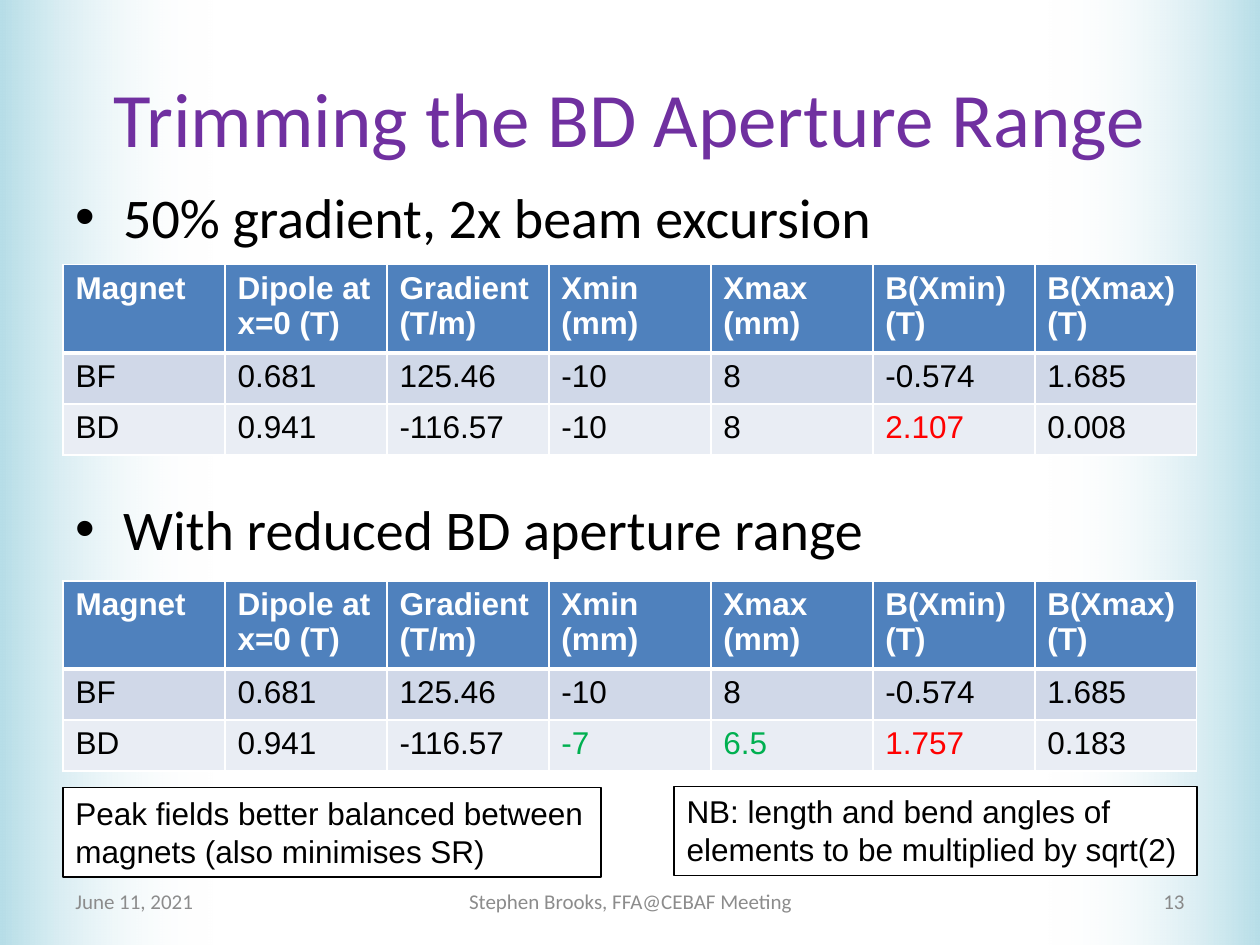
from lxml.etree import SubElement
from pptx import Presentation
from pptx.dml.color import RGBColor
from pptx.enum.shapes import MSO_SHAPE
from pptx.enum.text import MSO_ANCHOR, PP_ALIGN
from pptx.oxml.ns import qn
from pptx.util import Inches, Pt

COLUMNS, ROWS = 20, 15
HEADINGS = ["Magnet", "Dipole at x=0 (T)", "Gradient (T/m)", "Xmin (mm)",
            "Xmax (mm)", "B(Xmin) (T)", "B(Xmax) (T)"]
BF = ["BF", "0.681", "125.46", "-10", "8", "-0.574", "1.685"]
BD_FULL = ["BD", "0.941", "-116.57", "-10", "8", "2.107", "0.008"]
BD_TRIMMED = ["BD", "0.941", "-116.57", "-7", "6.5", "1.757", "0.183"]
RED, GREEN, GREY = "FF0000", "00B050", "8C8C8C"


def color(value):
    return RGBColor.from_string(value)


def style(target, values):
    for name, value in values.items():
        setattr(target, name, value)


class MagnetSlide:
    heading_font = "Calibri"
    data_font = "Arial"
    header_fill = "4F81BD"
    band_fills = ["D0D8E8", "E9EDF4"]
    edge_tint = "B7DEE8"

    def __init__(self):
        self.deck = Presentation()
        style(self.deck, {"slide_width": Inches(10), "slide_height": Inches(7.5)})
        self.page = self.deck.slides.add_slide(self.deck.slide_layouts[6])

    def across(self, columns):
        return round(self.deck.slide_width * columns / COLUMNS)

    def down(self, rows):
        return round(self.deck.slide_height * rows / ROWS)

    def place(self, left, top, width, height):
        return self.across(left), self.down(top), self.across(width), self.down(height)

    def add_words(self, para, words, size, font, ink="000000", bold=False):
        span = para.add_run()
        span.text = words
        style(span.font, {"size": Pt(size), "name": font, "bold": bold})
        span.font.color.rgb = color(ink)

    def edge(self, left, rotation):
        band = self.page.shapes.add_shape(
            MSO_SHAPE.RECTANGLE, *self.place(left, 0, 3.38, ROWS))
        band.rotation = rotation
        band.shadow.inherit = False
        band.line.fill.background()
        band.fill.gradient()
        band.fill.gradient_angle = 0
        for stop, tint in zip(band.fill.gradient_stops, [self.edge_tint, "FFFFFF"]):
            stop.color.rgb = color(tint)
        clear = band._element.spPr.findall(".//" + qn("a:srgbClr"))[1]
        SubElement(clear, qn("a:alpha"), val="0")

    def text(self, area, words, size, ink, align=PP_ALIGN.LEFT):
        box = self.page.shapes.add_textbox(*self.place(*area))
        style(box.text_frame, {"word_wrap": True, "vertical_anchor": MSO_ANCHOR.MIDDLE})
        para = box.text_frame.paragraphs[0]
        para.alignment = align
        self.add_words(para, words, size, self.heading_font, ink)

    def bullets(self, area, items, gap):
        box = self.page.shapes.add_textbox(*self.place(*area))
        frame = box.text_frame
        frame.word_wrap = True
        for index, item in enumerate(items):
            para = frame.add_paragraph() if index else frame.paragraphs[0]
            para.space_before = Pt(gap if index else 0)
            properties = para._p.get_or_add_pPr()
            properties.set("marL", str(Inches(0.38)))
            properties.set("indent", str(-Inches(0.38)))
            SubElement(properties, qn("a:buFont"), typeface=self.data_font)
            SubElement(properties, qn("a:buChar"), char="•")
            self.add_words(para, item, 32, self.heading_font)

    def borders(self, cell, bottom):
        properties = cell._tc.get_or_add_tcPr()
        for side, width in {"L": 1, "R": 1, "T": 1, "B": bottom}.items():
            line = SubElement(properties, qn("a:ln" + side), w=str(Pt(width)))
            fill = SubElement(line, qn("a:solidFill"))
            SubElement(fill, qn("a:srgbClr"), val="FFFFFF")

    def table(self, top, header_height, records, accents):
        heights = [header_height] + [0.81] * len(records)
        frame = self.page.shapes.add_table(
            len(heights), len(HEADINGS), *self.place(1, top, 18, sum(heights)))
        grid = frame.table
        for column in grid.columns:
            column.width = self.across(18 / len(HEADINGS))
        for r, values in enumerate([HEADINGS] + records):
            grid.rows[r].height = self.down(heights[r])
            header = r == 0
            for c, value in enumerate(values):
                cell = grid.cell(r, c)
                self.borders(cell, 3 if header else 1)
                cell.fill.solid()
                cell.fill.fore_color.rgb = color(
                    self.header_fill if header else self.band_fills[(r - 1) % 2])
                ink = "FFFFFF" if header else accents.get((r, c), "000000")
                self.add_words(cell.text_frame.paragraphs[0], value, 18,
                               self.data_font, ink, header)

    def remark(self, area, words):
        box = self.page.shapes.add_textbox(*self.place(*area))
        box.fill.solid()
        box.fill.fore_color.rgb = color("FFFFFF")
        box.line.color.rgb = color("000000")
        box.line.width = Pt(0.75)
        box.text_frame.word_wrap = True
        self.add_words(box.text_frame.paragraphs[0], words, 18, self.data_font)


def main():
    slide = MagnetSlide()
    slide.edge(16.62, 180)
    slide.edge(0, 0)
    slide.text((1, 0.6, 18, 2.5), "Trimming the BD Aperture Range", 44, "7030A0",
               PP_ALIGN.CENTER)
    slide.bullets((1, 2.8, 18, 9.9), ["50% gradient, 2x beam excursion",
                                      "With reduced BD aperture range"], 140)
    slide.text((1, 13.9, 4.66, 0.8), "June 11, 2021", 12, GREY)
    slide.text((6.84, 13.9, 6.34, 0.8), "Stephen Brooks, FFA@CEBAF Meeting", 12, GREY,
               PP_ALIGN.CENTER)
    slide.text((14.34, 13.9, 4.66, 0.8), "13", 12, "898989", PP_ALIGN.RIGHT)
    slide.table(4.2, 1.32, [BF, BD_FULL], {(2, 5): RED})
    slide.table(9.22, 1.4, [BF, BD_TRIMMED],
                {(2, 3): GREEN, (2, 4): GREEN, (2, 5): RED})
    slide.remark((10.7, 12.48, 8.3, 1.42),
                 "NB: length and bend angles of elements to be multiplied by sqrt(2)")
    slide.remark((1, 12.5, 8.54, 1.42),
                 "Peak fields better balanced between magnets (also minimises SR)")
    slide.deck.save("out.pptx")


if __name__ == "__main__":
    main()
